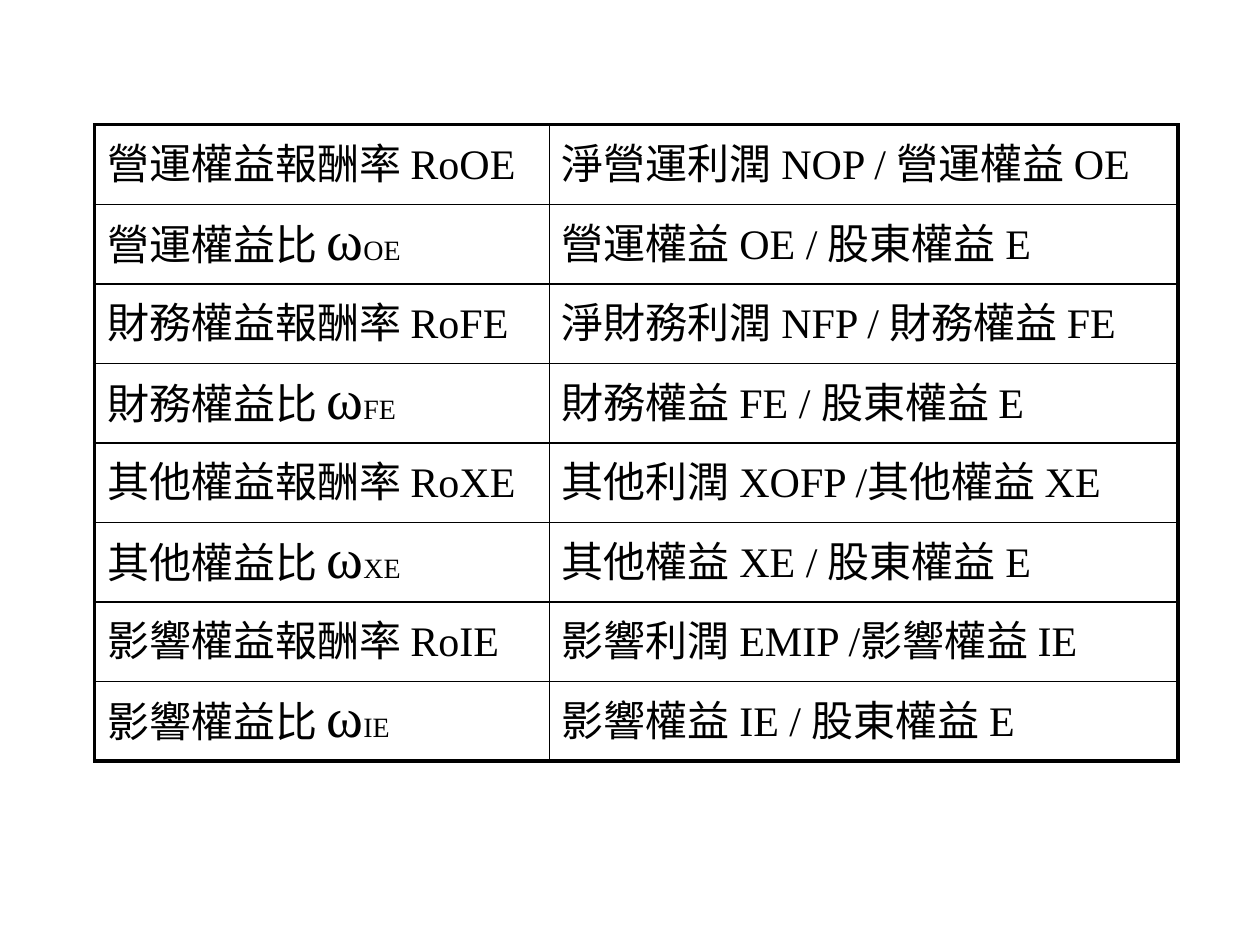
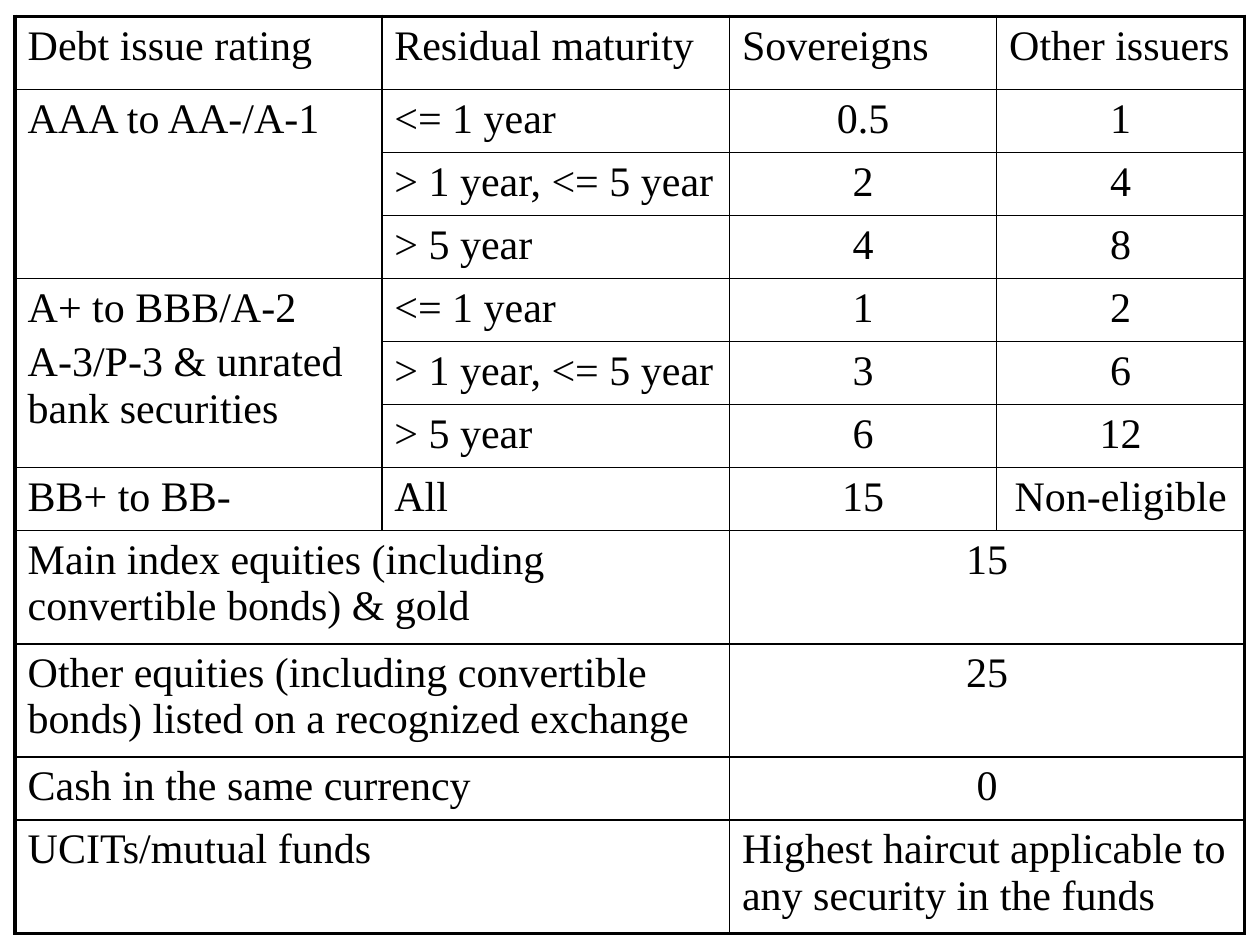
from lxml.etree import SubElement
from pptx import Presentation
from pptx.dml.color import RGBColor
from pptx.enum.text import PP_ALIGN
from pptx.oxml.ns import qn
from pptx.util import Inches, Pt

# Content: a cell is a list of paragraphs, a paragraph a list of (text, size) runs
BODY, OMEGA, SUBSCRIPT = 24, 32, 16


def text(*lines):
    return [[(line, BODY)] for line in lines]


def weight(label, equity):
    return [[(label + " ", BODY), ("ω", OMEGA), (equity, SUBSCRIPT)]]


EQUITY_RATIOS = [
    (text("營運權益報酬率 RoOE"), text("淨營運利潤 NOP / 營運權益 OE")),
    (weight("營運權益比", "OE"), text("營運權益 OE / 股東權益 E")),
    (text("財務權益報酬率 RoFE"), text("淨財務利潤 NFP / 財務權益 FE")),
    (weight("財務權益比", "FE"), text("財務權益 FE / 股東權益 E")),
    (text("其他權益報酬率 RoXE"), text("其他利潤 XOFP /其他權益 XE")),
    (weight("其他權益比", "XE"), text("其他權益 XE / 股東權益 E")),
    (text("影響權益報酬率 RoIE"), text("影響利潤 EMIP /影響權益 IE")),
    (weight("影響權益比", "IE"), text("影響權益 IE / 股東權益 E")),
]

# None continues the cell above or to the left
SHORT, MEDIUM, LONG = (text(m) for m in ("<= 1 year", "> 1 year, <= 5 year", "> 5 year"))
HAIRCUTS = [
    (text("Debt issue rating"), text("Residual maturity"), text("Sovereigns"), text("Other issuers")),
    (text("AAA to AA-/A-1"), SHORT, text("0.5"), text("1")),
    (None, MEDIUM, text("2"), text("4")),
    (None, LONG, text("4"), text("8")),
    (text("A+ to BBB/A-2", "A-3/P-3 & unrated bank securities"), SHORT, text("1"), text("2")),
    (None, MEDIUM, text("3"), text("6")),
    (None, LONG, text("6"), text("12")),
    (text("BB+ to BB-"), text("All"), text("15"), text("Non-eligible")),
    (text("Main index equities (including convertible bonds) & gold"), None, text("15"), None),
    (text("Other equities (including convertible bonds) listed on a recognized exchange"), None,
     text("25"), None),
    (text("Cash in the same currency"), None, text("0"), None),
    (text("UCITs/mutual funds"), None,
     text("Highest haircut applicable to any security in the funds"), None),
]
# (row, column): (rows, columns)
HAIRCUT_SPANS = {(1, 0): (3, 1), (4, 0): (3, 1)}
HAIRCUT_SPANS.update({(row, column): (1, 2) for row in range(8, 12) for column in (0, 2)})
HAIRCUT_CENTRED = {(row, column) for row in range(1, 11) for column in (2, 3)}

TABLES = [
    dict(rows=EQUITY_RATIOS, corner=(0.75, 0.99), widths=(3.61, 4.99), heights=[5.05 / 8] * 8),
    dict(rows=HAIRCUTS, corner=(0.12, 0.13), widths=(2.91, 2.76, 2.12, 1.97),
         heights=[0.58] + [0.5] * 7 + [0.9, 0.9, 0.5, 0.9],
         spans=HAIRCUT_SPANS, centred=HAIRCUT_CENTRED),
]

# Shared look
BLACK = RGBColor(0, 0, 0)
FRAME, RULE = Pt(2.25), Pt(1)
FONT_FORMAT = {"name": "Times New Roman", "bold": False}
TABLE_FORMAT = {"first_row": False, "horz_banding": False}


def apply(target, values):
    for name, value in values.items():
        setattr(target, name, value)


def write(cell, paragraphs, alignment):
    frame = cell.text_frame
    for number, runs in enumerate(paragraphs):
        paragraph = frame.add_paragraph() if number else frame.paragraphs[0]
        paragraph.alignment = alignment
        # Space before is a share of the line, so it grows with the type size
        before = SubElement(paragraph._p.get_or_add_pPr(), qn("a:spcBef"))
        SubElement(before, qn("a:spcPct"), val="20000")
        for words, size in runs:
            run = paragraph.add_run()
            run.text = words
            apply(run.font, {**FONT_FORMAT, "size": Pt(size)})
            run.font.color.rgb = BLACK


def draw_borders(cell, widths):
    properties = cell._tc.get_or_add_tcPr()
    for side, width in widths.items():
        line = SubElement(properties, qn("a:ln" + side), w=str(width))
        if width:
            fill = SubElement(line, qn("a:solidFill"))
            SubElement(fill, qn("a:srgbClr"), val=str(BLACK))
        else:
            SubElement(line, qn("a:noFill"))
    cell.fill.background()


def add_grid(slide, rows, corner, widths, heights, spans=None, centred=()):
    spans = spans or {}
    size = (sum(widths), sum(heights))
    box = [Inches(value) for value in corner + size]
    table = slide.shapes.add_table(len(rows), len(widths), *box).table
    apply(table, TABLE_FORMAT)
    for column, width in zip(table.columns, widths):
        column.width = Inches(width)
    for row, height in zip(table.rows, heights):
        row.height = Inches(height)

    for top, row in enumerate(rows):
        for left, paragraphs in enumerate(row):
            if paragraphs is None:
                continue
            tall, wide = spans.get((top, left), (1, 1))
            bottom, right = top + tall - 1, left + wide - 1
            # Rules run round the whole block, heavier on the table's rim
            block = {
                "L": (left, 0),
                "R": (right, len(widths) - 1),
                "T": (top, 0),
                "B": (bottom, len(rows) - 1),
            }
            rules = {side: FRAME if at == rim else RULE for side, (at, rim) in block.items()}
            for y in range(top, bottom + 1):
                for x in range(left, right + 1):
                    # The first cell speaks for the block; the others keep its outer sides
                    first = (y, x) == (top, left)
                    place = {"L": x, "R": x, "T": y, "B": y}
                    draw_borders(table.cell(y, x), {
                        side: width if first or place[side] == block[side][0] else 0
                        for side, width in rules.items()
                    })
            cell = table.cell(top, left)
            if (tall, wide) != (1, 1):
                cell.merge(table.cell(bottom, right))
            write(cell, paragraphs, PP_ALIGN.CENTER if (top, left) in centred else PP_ALIGN.LEFT)


def main():
    deck = Presentation()
    deck.slide_width, deck.slide_height = Inches(10), Inches(7.5)
    for grid in TABLES:
        add_grid(deck.slides.add_slide(deck.slide_layouts[6]), **grid)
    deck.save("out.pptx")


if __name__ == "__main__":
    main()
